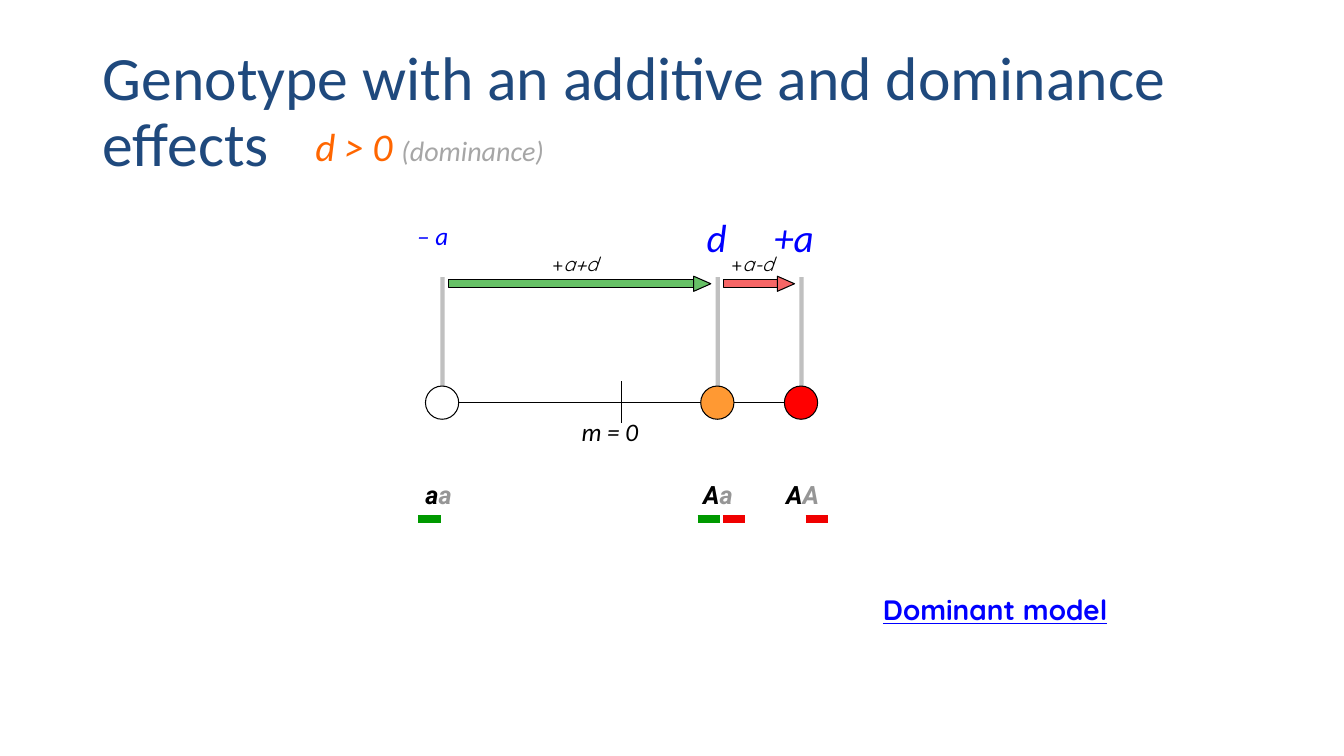
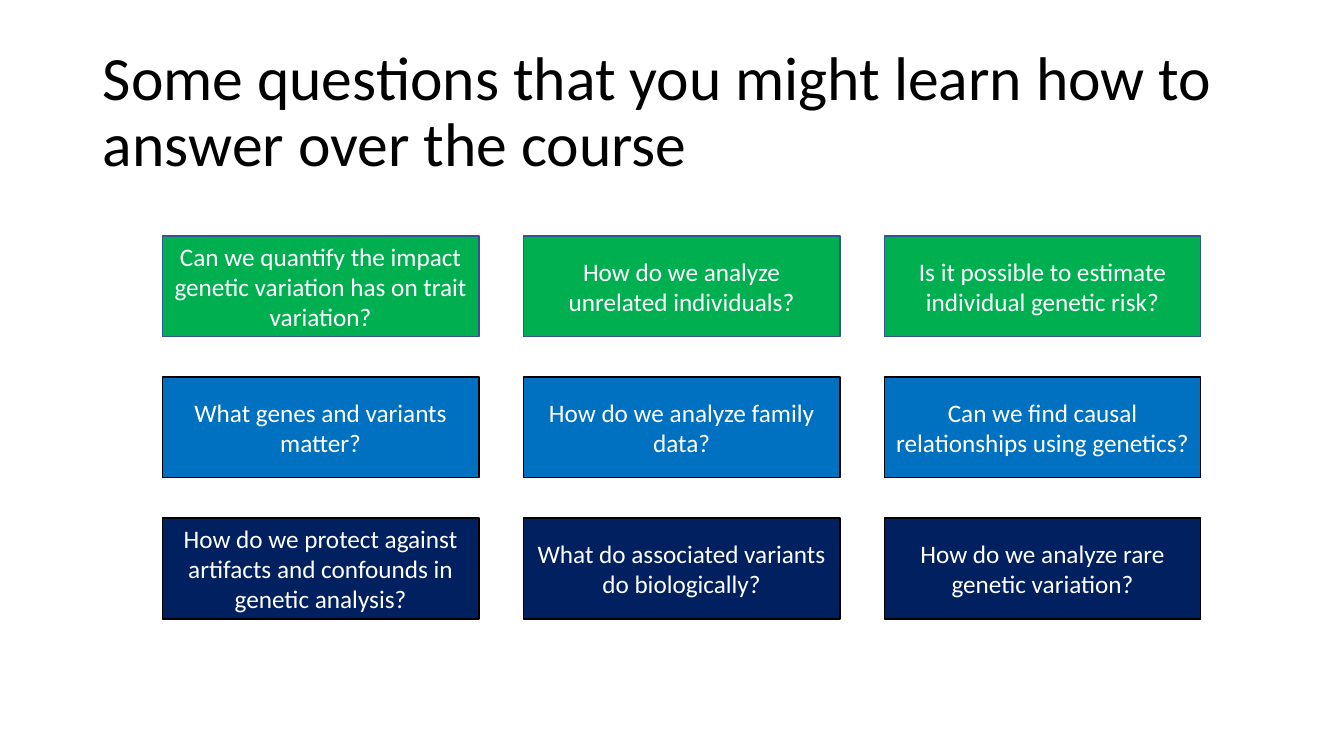
import pptx
import pptx.dml.color
import pptx.enum.shapes
import pptx.enum.text
import pptx.oxml.ns
import pptx.util
from lxml import etree

Inches = pptx.util.Inches
Pt = pptx.util.Pt
Kind = pptx.enum.shapes.MSO_SHAPE
Align = pptx.enum.text.PP_ALIGN
Anchor = pptx.enum.text.MSO_ANCHOR
Size = pptx.enum.text.MSO_AUTO_SIZE
qn = pptx.oxml.ns.qn

COLORS = {
    "black": "000000", "white": "FFFFFF", "navy": "1F497D", "blue": "0000FF",
    "gray": "969696", "silver": "A6A6A6", "orange": "FF6600", "amber": "FF9933",
    "red": "FF0000", "crimson": "F00000", "green": "009900", "leaf": "00B050",
    "sky": "0070C0", "night": "002060", "edge": "325491",
}


def rgb(name):
    return pptx.dml.color.RGBColor.from_string(COLORS[name])


def fade(shape, percent):
    color = next(shape.element.spPr.iter(qn("a:srgbClr")))
    etree.SubElement(color, qn("a:alpha")).set("val", str(percent * 1000))


class Deck:
    def __init__(self):
        self.show = pptx.Presentation()
        self.show.slide_width = Inches(13.33)
        self.show.slide_height = Inches(7.5)
        self.slide = None

    def style(self, run, size, color="black", font="Calibri", bold=False, italic=False, under=False):
        run.font.size = Pt(size)
        run.font.name = font
        run.font.color.rgb = rgb(color)
        run.font.bold = bold
        run.font.italic = italic
        run.font.underline = under

    def title(self, text, color):
        self.slide = self.show.slides.add_slide(self.show.slide_layouts[5])
        head = self.slide.shapes.title
        head.left, head.top = Inches(0.92), Inches(0.4)
        head.width, head.height = Inches(11.5), Inches(1.45)
        frame = head.text_frame
        frame.text = text
        frame.auto_size = Size.NONE
        frame.vertical_anchor = Anchor.MIDDLE
        para = frame.paragraphs[0]
        para.alignment = Align.LEFT
        para.line_spacing = 0.9
        self.style(para.runs[0], 44, color)

    def text(self, x, y, w, h, parts, align=Align.CENTER, wrap=True):
        frame = self.slide.shapes.add_textbox(Inches(x), Inches(y), Inches(w), Inches(h)).text_frame
        frame.word_wrap = wrap
        para = frame.paragraphs[0]
        para.alignment = align
        for words, look in parts:
            run = para.add_run()
            run.text = words
            self.style(run, **look)

    def label(self, x, y, w, h, words, size, color):
        look = dict(size=size, color=color, italic=True)
        self.text(x, y, w, h, [(words, look)], Align.LEFT, False)

    def line(self, x1, y1, x2, y2, color="black", width=0.75, alpha=100):
        line = self.slide.shapes.add_connector(
            pptx.enum.shapes.MSO_CONNECTOR.STRAIGHT, Inches(x1), Inches(y1), Inches(x2), Inches(y2))
        line.line.color.rgb = rgb(color)
        line.line.width = Pt(width)
        etree.SubElement(line.element.spPr, qn("a:effectLst"))
        if alpha < 100:
            fade(line, alpha)

    def shape(self, kind, x, y, w, h, fill, edge="black", width=0.75, alpha=100):
        shape = self.slide.shapes.add_shape(kind, Inches(x), Inches(y), Inches(w), Inches(h))
        shape.shadow.inherit = False
        shape.fill.solid()
        shape.fill.fore_color.rgb = rgb(fill)
        shape.line.color.rgb = rgb(edge)
        shape.line.width = Pt(width)
        if alpha < 100:
            fade(shape, alpha)
        return shape

    def arrow(self, start, end, color):
        neck = end - 0.24
        self.shape(Kind.RECTANGLE, start + 0.06, 2.77, neck - start - 0.06, 0.08, color, alpha=60)
        tip = self.shape(Kind.ISOSCELES_TRIANGLE, neck + 0.01, 2.73, 0.15, 0.17, color, alpha=60)
        tip.rotation = 90

    def card(self, x, y, words, fill, edge):
        card = self.shape(Kind.RECTANGLE, x, y, 3.14, 1, fill, edge, 1)
        frame = card.text_frame
        frame.word_wrap = True
        frame.vertical_anchor = Anchor.MIDDLE
        frame.text = words
        para = frame.paragraphs[0]
        para.alignment = Align.CENTER
        self.style(para.runs[0], 18, "white")


def model(deck):
    deck.title("Genotype with an additive and dominance effects", "navy")
    deck.text(3.03, 1.16, 2.57, 0.57, [
        ("d > 0 ", dict(size=28, color="orange", italic=True)),
        ("(dominance)", dict(size=20, color="silver", italic=True)),
    ], Align.LEFT, False)

    deck.line(4.32, 3.99, 8, 3.99)
    deck.line(6.16, 3.78, 6.16, 4.2)
    deck.label(5.67, 4.08, 0.77, 0.4, "m = 0", 18, "black")
    deck.label(4.04, 2.14, 0.57, 0.4, "– a", 18, "blue")
    deck.label(6.91, 2.07, 0.4, 0.57, "d", 28, "blue")
    deck.label(7.58, 2.07, 0.6, 0.57, "+a", 28, "blue")

    low, mid, high = 4.39, 7.12, 7.95
    for x, fill, pair, center in [
        (low, "white", "aa", 4.35), (mid, "amber", "Aa", 7.12), (high, "red", "AA", 7.96),
    ]:
        deck.line(x, 2.75, x, 4.02, "gray", 3, 60)
        deck.shape(Kind.OVAL, x - 0.17, 3.83, 0.33, 0.33, fill)
        deck.text(center - 0.5, 4.71, 1, 0.35, [
            (gene, dict(size=18, color=color, font="Roboto", bold=True, italic=True))
            for gene, color in zip(pair, ("black", "gray"))
        ])

    for x, color in [(4.15, "green"), (6.92, "green"), (7.17, "crimson"), (7.99, "crimson")]:
        deck.line(x, 5.15, x + 0.22, 5.15, color, 6)

    for start, end, color, x, w, words in [
        (low, mid, "green", 5.31, 0.79, "a+d"), (mid, high, "crimson", 7.1, 0.73, "a-d"),
    ]:
        deck.arrow(start, end, color)
        look = dict(size=14, font="Quicksand")
        deck.text(x, 2.45, w, 0.33, [("+", look), (words, dict(look, italic=True))])

    deck.text(8.58, 5.83, 2.58, 0.77, [
        ("Dominant model", dict(size=20, color="blue", font="Quicksand", bold=True, under=True)),
    ])


def course(deck):
    deck.title("Some questions that you might learn how to answer over the course", "black")
    rows = [
        ("leaf", "edge", [
            "Can we quantify the impact genetic variation has on trait variation?",
            "How do we analyze unrelated individuals?",
            "Is it possible to estimate individual genetic risk?"]),
        ("sky", "black", [
            "What genes and variants matter?",
            "How do we analyze family data?",
            "Can we find causal relationships using genetics?"]),
        ("night", "black", [
            "How do we protect against artifacts and confounds in genetic analysis?",
            "What do associated variants do biologically?",
            "How do we analyze rare genetic variation?"]),
    ]
    for row, (fill, edge, asks) in enumerate(rows):
        for col, words in enumerate(asks):
            deck.card(1.61 + 3.58 * col, 2.34 + 1.4 * row, words, fill, edge)


def main():
    deck = Deck()
    model(deck)
    course(deck)
    deck.show.save("out.pptx")


if __name__ == "__main__":
    main()
